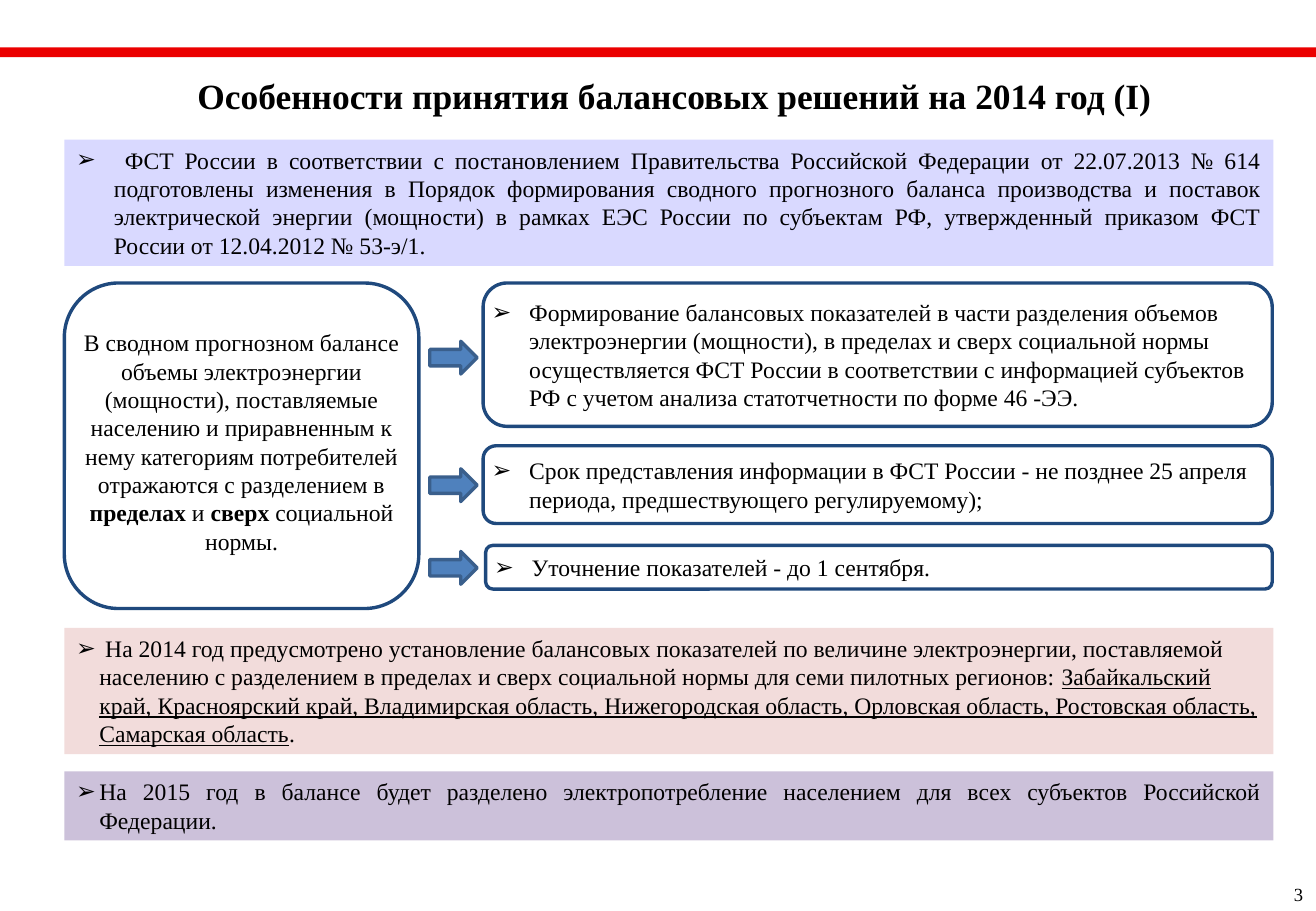
from lxml import etree
from pptx import Presentation
from pptx.dml.color import RGBColor
from pptx.enum.shapes import MSO_SHAPE
from pptx.enum.text import MSO_ANCHOR, MSO_AUTO_SIZE, PP_ALIGN
from pptx.oxml.ns import qn
from pptx.util import Inches, Pt

FONT = "Times New Roman"
BLACK = RGBColor(0x00, 0x00, 0x00)
WHITE = RGBColor(0xFF, 0xFF, 0xFF)
RED = RGBColor(0xEB, 0x00, 0x00)
NAVY = RGBColor(0x1F, 0x49, 0x7D)
BLUE = RGBColor(0x4F, 0x81, 0xBD)
DARK_BLUE = RGBColor(0x3A, 0x5F, 0x8C)
LAVENDER = RGBColor(0xD9, 0xD9, 0xFF)
PINK = RGBColor(0xF2, 0xDC, 0xDB)
PURPLE = RGBColor(0xCC, 0xC1, 0xDA)

SLIDE_W, SLIDE_H = 10.84, 7.5
LEFT, WIDTH = 0.53, 9.96
CARD_RIGHT = 10.48
ARROW_W, ARROW_H = 0.39, 0.27
CORNER_INSET = 0.0488  # text inset of a rounded corner, per unit of height

ORDER_TEXT = [(
    " ФСТ России в соответствии с постановлением Правительства Российской "
    "Федерации от 22.07.2013 № 614 подготовлены изменения в Порядок "
    "формирования сводного прогнозного баланса производства и поставок "
    "электрической энергии (мощности) в рамках ЕЭС России по субъектам РФ, "
    "утвержденный приказом ФСТ России от 12.04.2012 № 53-э/1.", "")]
BALANCE_TEXT = [
    ("В сводном прогнозном балансе объемы электроэнергии (мощности), "
     "поставляемые населению и приравненным к нему категориям потребителей "
     "отражаются с разделением в ", ""),
    ("пределах", "b"), (" и ", ""), ("сверх", "b"),
    (" социальной нормы.", "")]
# left, top, height, arrow top, text
CARDS = [
    (3.98, 2.33, 1.18, 2.81,
     "Формирование балансовых показателей в части разделения объемов "
     "электроэнергии (мощности), в пределах и сверх социальной нормы "
     "осуществляется ФСТ России в соответствии с информацией субъектов РФ "
     "с учетом анализа статотчетности по форме 46 -ЭЭ."),
    (3.98, 3.67, 0.64, 3.86,
     "Срок представления информации в ФСТ России - не позднее 25 апреля "
     "периода, предшествующего регулируемому);"),
    (4.0, 4.49, 0.36, 4.54, "Уточнение показателей - до 1 сентября."),
]
PILOT_TEXT = [
    (" На 2014 год предусмотрено установление балансовых показателей по "
     "величине электроэнергии, поставляемой населению с разделением в "
     "пределах и сверх социальной нормы для семи пилотных регионов: ", ""),
    ("Забайкальский край, Красноярский край, Владимирская область, "
     "Нижегородская область, Орловская область, Ростовская область, "
     "Самарская область", "u"),
    (".", "")]
NEXT_YEAR_TEXT = [(
    "На 2015 год в балансе будет разделено электропотребление населением "
    "для всех субъектов Российской Федерации.", "")]


def add_box(slide, kind, x, y, w, h, fill, line=None):
    sp = slide.shapes.add_shape(kind, Inches(x), Inches(y), Inches(w), Inches(h))
    sp.shadow.inherit = False
    sp.fill.solid()
    sp.fill.fore_color.rgb = fill
    if line is None:
        sp.line.fill.background()
    else:
        sp.line.color.rgb = line
        sp.line.width = Pt(2)
    return sp


def set_insets(tf, left, top, right, bottom):
    tf.margin_left, tf.margin_top = Inches(left), Inches(top)
    tf.margin_right, tf.margin_bottom = Inches(right), Inches(bottom)


def format_run(r, size, bold=False, underline=False):
    r.font.name = FONT
    r.font.size = Pt(size)
    r.font.color.rgb = BLACK
    r.font.bold = bold
    r.font.underline = underline


def write(tf, runs, align=PP_ALIGN.LEFT, indent=None, anchor=MSO_ANCHOR.TOP):
    """Fill one paragraph with (text, style) runs; an indent adds a bullet."""
    tf.word_wrap = True
    tf.vertical_anchor = anchor
    p = tf.paragraphs[0]
    p.alignment = align
    if indent:
        pPr = p._p.get_or_add_pPr()
        pPr.set("marL", str(Inches(indent)))
        pPr.set("indent", str(-Inches(indent)))
        etree.SubElement(pPr, qn("a:buFont")).set("typeface", "Arial")
        etree.SubElement(pPr, qn("a:buChar")).set("char", "➢")
    for text, style in runs:
        r = p.add_run()
        r.text = text
        format_run(r, 14, style == "b", style == "u")


def add_heading(slide):
    add_box(slide, MSO_SHAPE.RECTANGLE, 0, 0.39, SLIDE_W, 0.08, RED)
    title = slide.shapes.title
    title.left, title.top = Inches(0.97), Inches(0.56)
    title.width, title.height = Inches(9.17), Inches(0.45)
    tf = title.text_frame
    tf.text = "Особенности принятия балансовых решений на 2014 год (I)"
    tf.auto_size = MSO_AUTO_SIZE.NONE
    tf.vertical_anchor = MSO_ANCHOR.TOP
    tf.paragraphs[0].alignment = PP_ALIGN.CENTER
    format_run(tf.paragraphs[0].runs[0], 21, bold=True)


def add_band(slide, y, h, fill, runs, align, indent):
    sp = add_box(slide, MSO_SHAPE.RECTANGLE, LEFT, y, WIDTH, h, fill)
    write(sp.text_frame, runs, align, indent)


def add_balance_card(slide, x, y, w, h):
    sp = add_box(slide, MSO_SHAPE.ROUNDED_RECTANGLE, x, y, w, h, WHITE, NAVY)
    set_insets(sp.text_frame, 0, 0, 0, 0.07)
    write(sp.text_frame, BALANCE_TEXT, PP_ALIGN.CENTER, anchor=MSO_ANCHOR.MIDDLE)


def add_rule_card(slide, x, y, h, arrow_y, text):
    sp = add_box(slide, MSO_SHAPE.ROUNDED_RECTANGLE, x, y, CARD_RIGHT - x, h,
                 WHITE, NAVY)
    set_insets(sp.text_frame, 0.07 - CORNER_INSET * h, 0, 0.05, 0)
    write(sp.text_frame, [(text, "")], indent=0.31, anchor=MSO_ANCHOR.MIDDLE)
    add_box(slide, MSO_SHAPE.RIGHT_ARROW, 3.54, arrow_y, ARROW_W, ARROW_H,
            BLUE, DARK_BLUE)


def add_page_number(slide, number):
    tb = slide.shapes.add_textbox(Inches(10.56), Inches(7.22),
                                  Inches(0.28), Inches(0.29))
    tf = tb.text_frame
    tf.text = number
    tf.word_wrap = False
    format_run(tf.paragraphs[0].runs[0], 11)


def main():
    prs = Presentation()
    prs.slide_width, prs.slide_height = Inches(SLIDE_W), Inches(SLIDE_H)
    slide = prs.slides.add_slide(prs.slide_layouts[5])
    add_heading(slide)
    add_band(slide, 1.15, 1.04, LAVENDER, ORDER_TEXT, PP_ALIGN.JUSTIFY, 0.31)
    add_balance_card(slide, LEFT, 2.33, 2.92, 2.68)
    for card in CARDS:
        add_rule_card(slide, *card)
    add_band(slide, 5.17, 1.04, PINK, PILOT_TEXT, PP_ALIGN.LEFT, 0.19)
    add_band(slide, 6.35, 0.57, PURPLE, NEXT_YEAR_TEXT, PP_ALIGN.JUSTIFY, 0.19)
    add_page_number(slide, "3")
    prs.save("out.pptx")


if __name__ == "__main__":
    main()
